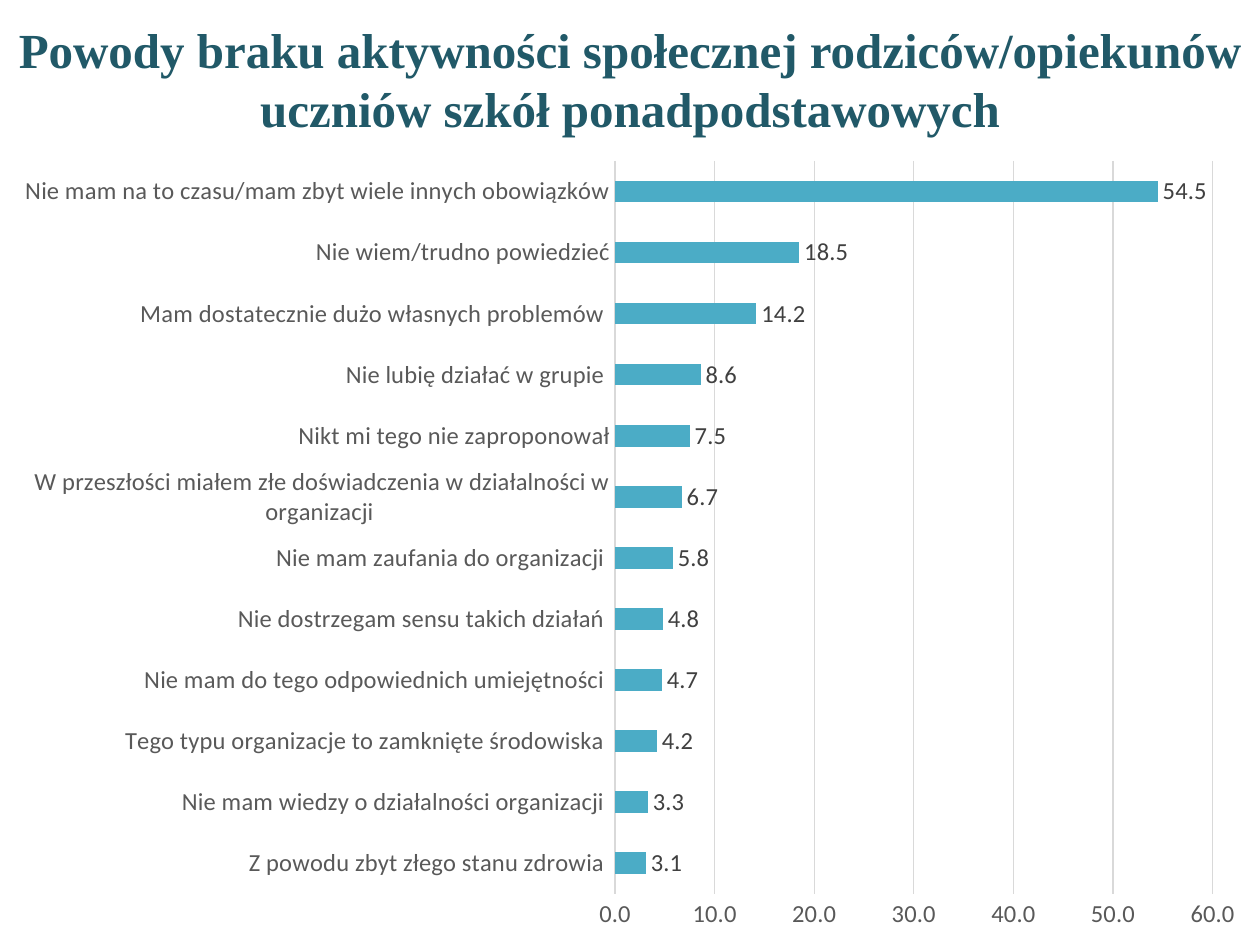
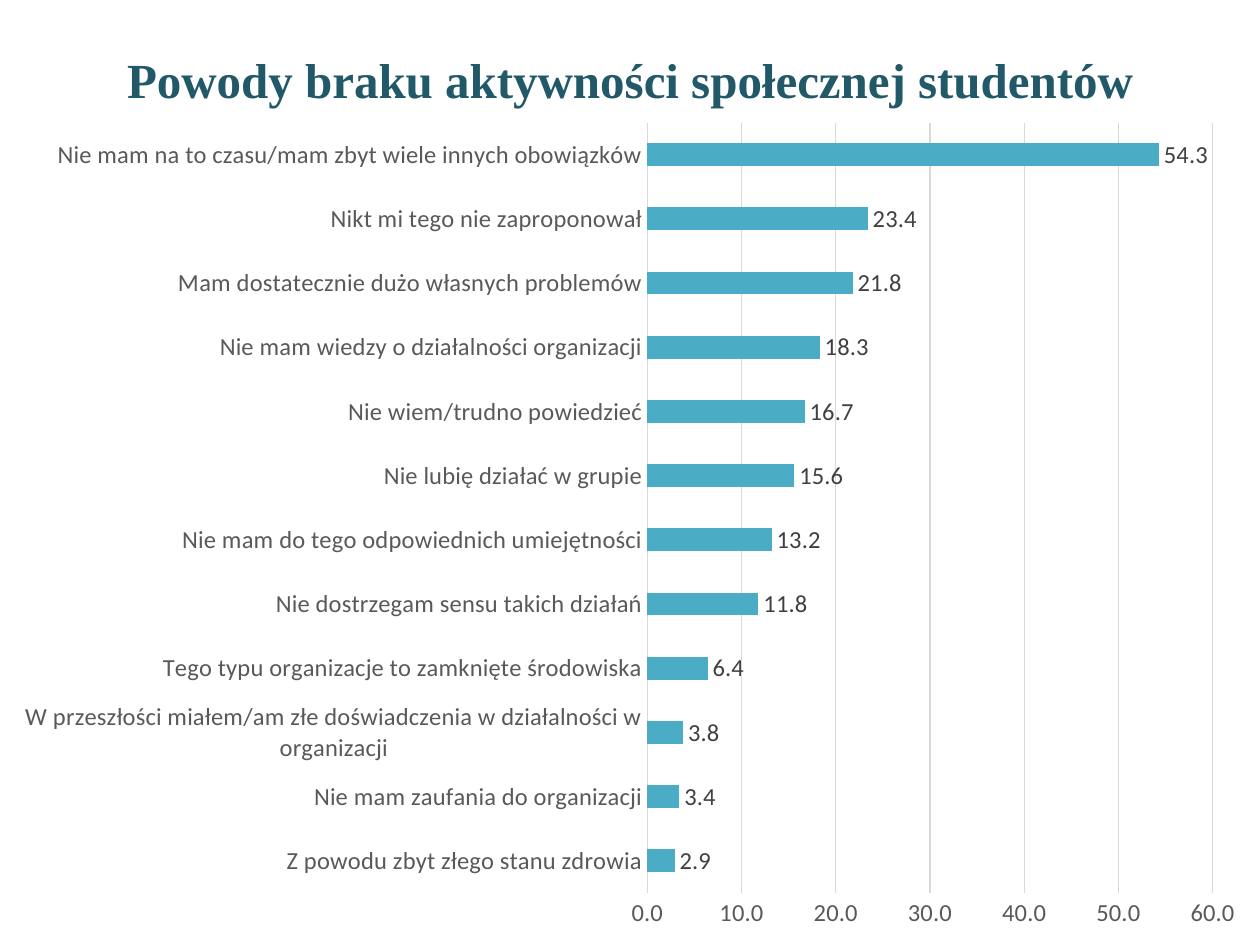
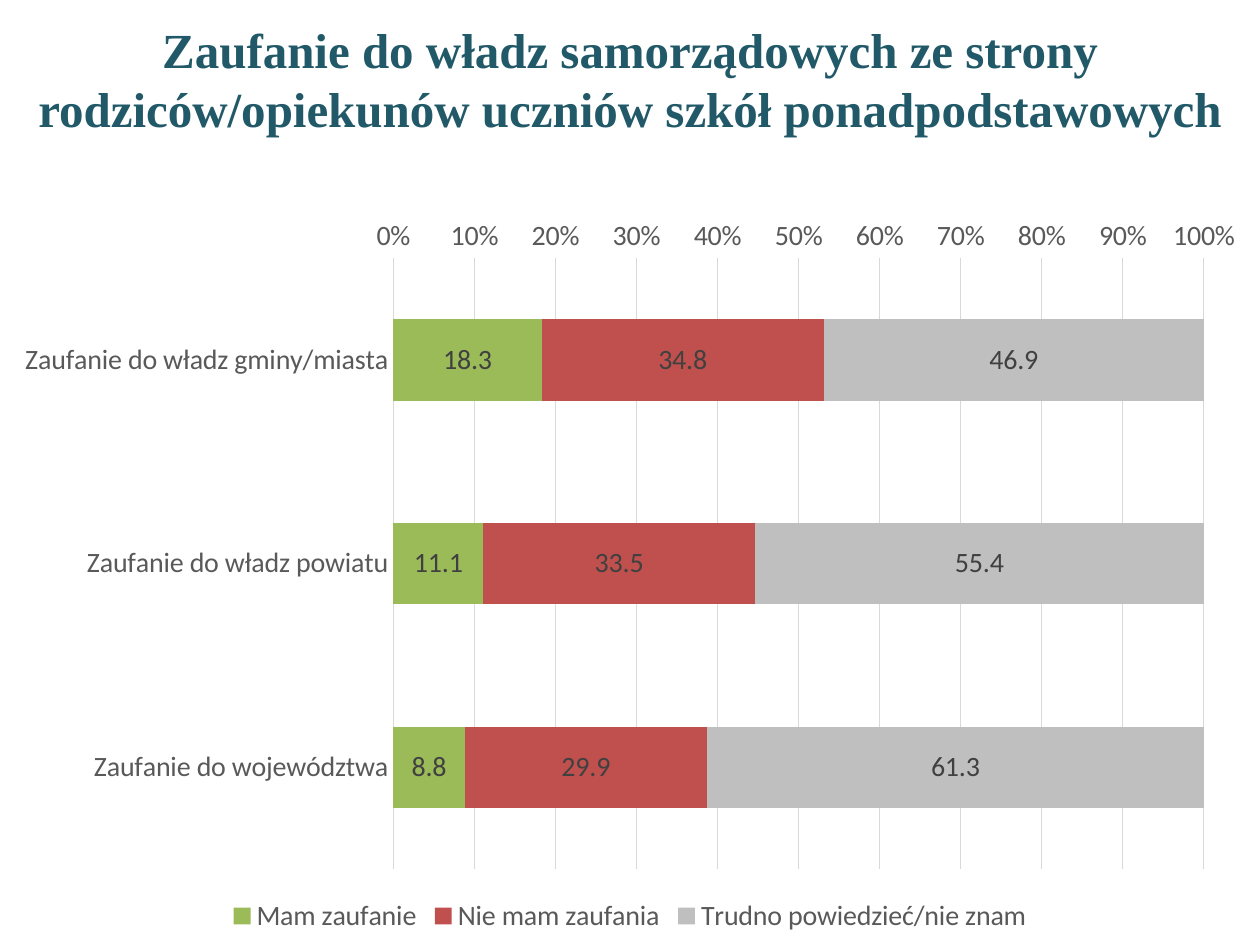
from dataclasses import dataclass

from pptx import Presentation
from pptx.chart.data import CategoryChartData
from pptx.dml.color import RGBColor
from pptx.enum.chart import XL_CHART_TYPE, XL_LABEL_POSITION, XL_LEGEND_POSITION, XL_TICK_MARK
from pptx.enum.text import MSO_ANCHOR, MSO_AUTO_SIZE, PP_ALIGN
from pptx.util import Inches, Pt

CLUSTERED = XL_CHART_TYPE.BAR_CLUSTERED
STACKED = XL_CHART_TYPE.BAR_STACKED_100
OUTSIDE_END = XL_LABEL_POSITION.OUTSIDE_END
CENTERED = XL_LABEL_POSITION.CENTER
LEGEND_BOTTOM = XL_LEGEND_POSITION.BOTTOM
NO_TICK = XL_TICK_MARK.NONE
ALIGN_CENTER = PP_ALIGN.CENTER
ANCHOR_MIDDLE = MSO_ANCHOR.MIDDLE
NO_AUTOFIT = MSO_AUTO_SIZE.NONE
TITLE_ONLY = 5


@dataclass(frozen=True)
class Theme:
    title_font: str = "Times New Roman"
    chart_font: str = "Calibri"
    base_font: str = "Arial"
    title_size: int = 28
    reasons_size: int = 14
    trust_size: int = 16
    base_size: int = 10
    line_width: float = 0.75
    title: str = "215968"
    base: str = "000000"
    axis_text: str = "595959"
    label_text: str = "404040"
    grid: str = "D9D9D9"
    reason: str = "4BACC6"
    trust: str = "9BBB59"
    distrust: str = "C0504D"
    undecided: str = "BFBFBF"


THEME = Theme()


def style_font(font, *, name=THEME.chart_font, size, color, bold=False):
    font.name = name
    font.size = Pt(size)
    font.bold = bold
    font.color.rgb = RGBColor.from_string(color)


def write_text(shape, text, *, align=ALIGN_CENTER, anchor=ANCHOR_MIDDLE, **font_format):
    frame = shape.text_frame
    frame.word_wrap = True
    frame.auto_size = NO_AUTOFIT
    frame.vertical_anchor = anchor
    paragraph = frame.paragraphs[0]
    paragraph.alignment = align
    run = paragraph.add_run()
    run.text = text
    style_font(run.font, **font_format)


# Content: categories and series of each chart
parent_reasons = [
    ("Z powodu zbyt złego stanu zdrowia ", 3.1),
    ("Nie mam wiedzy o działalności organizacji ", 3.3),
    ("Tego typu organizacje to zamknięte środowiska ", 4.2),
    ("Nie mam do tego odpowiednich umiejętności ", 4.7),
    ("Nie dostrzegam sensu takich działań ", 4.8),
    ("Nie mam zaufania do organizacji ", 5.8),
    ("W przeszłości miałem złe doświadczenia w działalności w organizacji ", 6.7),
    ("Nikt mi tego nie zaproponował", 7.5),
    ("Nie lubię działać w grupie ", 8.6),
    ("Mam dostatecznie dużo własnych problemów ", 14.2),
    ("Nie wiem/trudno powiedzieć", 18.5),
    ("Nie mam na to czasu/mam zbyt wiele innych obowiązków", 54.5),
]
student_reasons = [
    ("Z powodu zbyt złego stanu zdrowia", 2.9),
    ("Nie mam zaufania do organizacji", 3.4),
    ("W przeszłości miałem/am złe doświadczenia w działalności w organizacji", 3.8),
    ("Tego typu organizacje to zamknięte środowiska", 6.4),
    ("Nie dostrzegam sensu takich działań", 11.8),
    ("Nie mam do tego odpowiednich umiejętności", 13.2),
    ("Nie lubię działać w grupie", 15.6),
    ("Nie wiem/trudno powiedzieć", 16.7),
    ("Nie mam wiedzy o działalności organizacji", 18.3),
    ("Mam dostatecznie dużo własnych problemów", 21.8),
    ("Nikt mi tego nie zaproponował", 23.4),
    ("Nie mam na to czasu/mam zbyt wiele innych obowiązków", 54.3),
]
trust_levels = [
    ("Zaufanie do władz gminy/miasta", 18.3, 34.8, 46.9),
    ("Zaufanie do władz powiatu", 11.1, 33.5, 55.4),
    ("Zaufanie do województwa", 8.8, 29.9, 61.3),
]
reason_series = [("Series 1", THEME.reason)]
trust_series = [
    ("Mam zaufanie", THEME.trust),
    ("Nie mam zaufania", THEME.distrust),
    ("Trudno powiedzieć/nie znam", THEME.undecided),
]

# Title, chart top, chart height, rows, series, stacked
slides = [
    ("Powody braku aktywności społecznej rodziców/opiekunów uczniów szkół ponadpodstawowych",
     1.15, 6.35, parent_reasons, reason_series, False),
    ("Powody braku aktywności społecznej studentów",
     0.84, 6.66, student_reasons, reason_series, False),
    ("Zaufanie do władz samorządowych ze strony rodziców/opiekunów uczniów szkół ponadpodstawowych",
     1.62, 5.83, trust_levels, trust_series, True),
]

presentation = Presentation()
presentation.slide_width = Inches(10)
presentation.slide_height = Inches(7.5)

for title_text, top, height, rows, series_styles, stacked in slides:
    slide = presentation.slides.add_slide(presentation.slide_layouts[TITLE_ONLY])

    # Title
    title = slide.shapes.title
    title.left, title.top = Inches(0), Inches(0)
    title.width, title.height = Inches(10), Inches(1.25)
    write_text(title, title_text, name=THEME.title_font, size=THEME.title_size,
               color=THEME.title, bold=True)

    # Chart
    categories, *value_columns = zip(*rows)
    chart_data = CategoryChartData(number_format="0.0")
    chart_data.categories = categories
    for (series_name, _), values in zip(series_styles, value_columns):
        chart_data.add_series(series_name, values)
    chart = slide.shapes.add_chart(
        STACKED if stacked else CLUSTERED,
        Inches(0), Inches(top), Inches(10), Inches(height), chart_data).chart
    text_size = THEME.trust_size if stacked else THEME.reasons_size
    style_font(chart.font, name=THEME.base_font, size=THEME.base_size, color=THEME.base)
    chart.has_title = False

    # Bars and their labels
    plot = chart.plots[0]
    plot.vary_by_categories = False
    plot.gap_width = 150 if stacked else 182
    plot.overlap = 100 if stacked else 0
    for series, (_, color) in zip(plot.series, series_styles):
        series.format.fill.solid()
        series.format.fill.fore_color.rgb = RGBColor.from_string(color)
        labels = series.data_labels
        labels.show_value = True
        labels.number_format = "0.0"
        labels.number_format_is_linked = False
        labels.position = CENTERED if stacked else OUTSIDE_END
        style_font(labels.font, size=text_size, color=THEME.label_text)

    # Axes and gridlines
    category_axis, value_axis = chart.category_axis, chart.value_axis
    for axis in (category_axis, value_axis):
        axis.major_tick_mark = NO_TICK
        axis.minor_tick_mark = NO_TICK
        style_font(axis.tick_labels.font, size=text_size, color=THEME.axis_text)
    category_axis.reverse_order = stacked
    value_axis.minimum_scale = 0
    value_axis.maximum_scale = 1 if stacked else 60
    value_axis.major_unit = 0.1 if stacked else 10
    value_axis.tick_labels.number_format = "0%" if stacked else "0.0"
    value_axis.tick_labels.number_format_is_linked = False
    value_axis.format.line.fill.background()
    value_axis.has_major_gridlines = True
    for line in (category_axis.format.line, value_axis.major_gridlines.format.line):
        line.color.rgb = RGBColor.from_string(THEME.grid)
        line.width = Pt(THEME.line_width)

    # Legend
    chart.has_legend = stacked
    if stacked:
        chart.legend.position = LEGEND_BOTTOM
        chart.legend.include_in_layout = False
        style_font(chart.legend.font, size=text_size, color=THEME.axis_text)

presentation.save("out.pptx")
